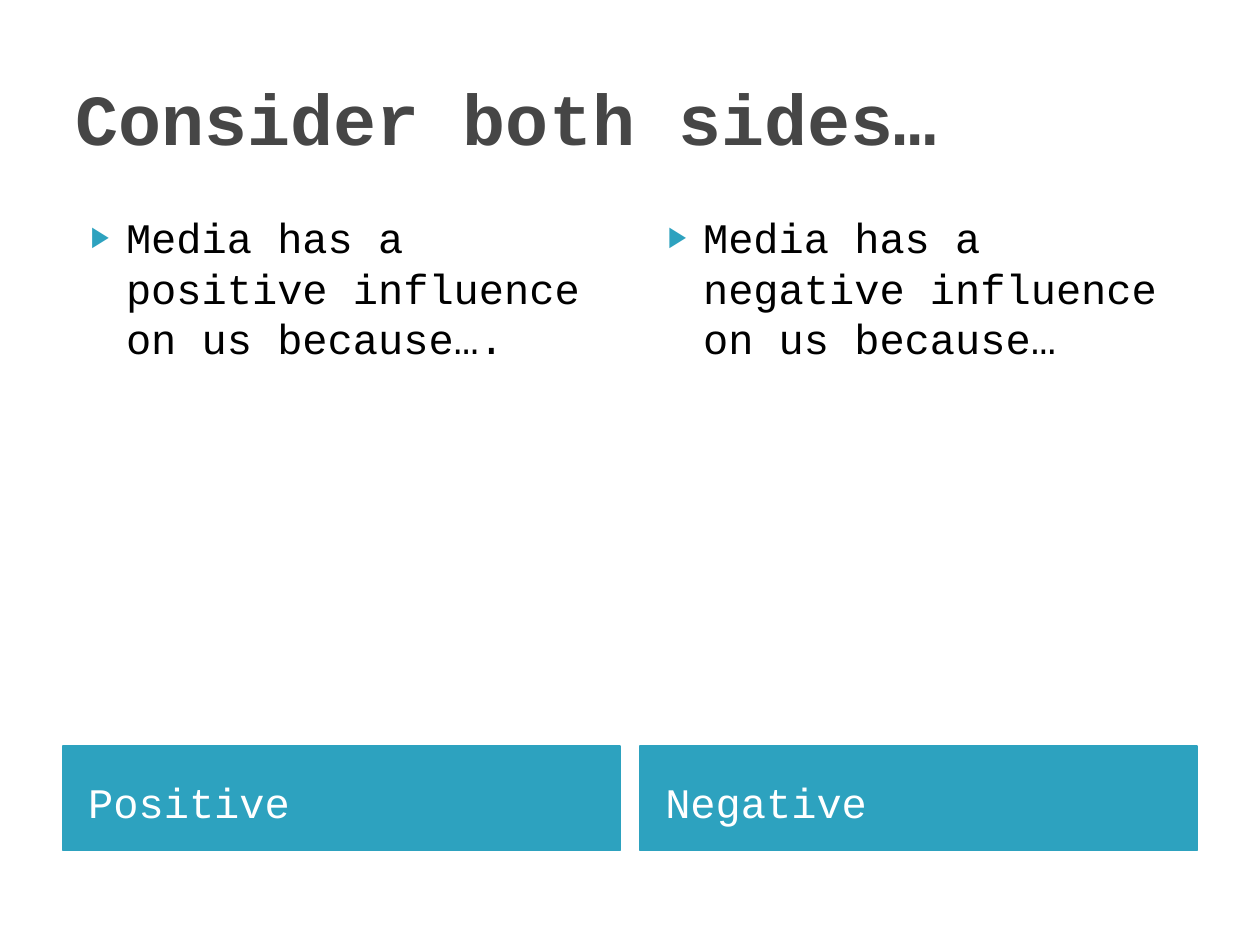
from lxml import etree
from pptx import Presentation
from pptx import util as u
from pptx.dml.color import RGBColor
from pptx.enum import text
from pptx.oxml.ns import qn

COLORS = {"heading": "464646", "accent": "2DA2BF", "label": "FFFFFF", "body": "000000"}
MARGIN, GUTTER = 0.5, 0.16
COLUMN_WIDTH = (10 - 2 * MARGIN - GUTTER) / 2
SIDES = [
    ("Positive", "Media has a positive influence on us because…."),
    ("Negative", "Media has a negative influence on us because…"),
]


def fill_placeholder(holder, box, words, size, color, anchor, bold=False):
    """Place a placeholder, write its one paragraph and return that paragraph."""
    holder.left, holder.top, holder.width, holder.height = map(u.Inches, box)
    frame = holder.text_frame
    frame.text = words
    frame.word_wrap = True
    frame.auto_size = text.MSO_AUTO_SIZE.NONE
    frame.vertical_anchor = anchor
    paragraph = frame.paragraphs[0]
    paragraph.alignment = text.PP_ALIGN.LEFT
    paragraph.space_before = u.Pt(0)
    for run in paragraph.runs:
        run.font.name = "Courier New"
        run.font.size = u.Pt(size)
        run.font.bold = bold
        run.font.color.rgb = RGBColor.from_string(COLORS[color])
    return paragraph


def add_triangle_bullet(paragraph):
    properties = paragraph._p.get_or_add_pPr()
    properties.set("marL", str(u.Inches(0.4)))
    properties.set("indent", str(u.Inches(-0.28)))
    bullet_color = etree.SubElement(properties, qn("a:buClr"))
    etree.SubElement(bullet_color, qn("a:srgbClr"), val=COLORS["accent"])
    etree.SubElement(properties, qn("a:buSzPct"), val="68000")
    etree.SubElement(properties, qn("a:buChar"), char="▶")


deck = Presentation()
deck.slide_width, deck.slide_height = u.Inches(10), u.Inches(7.5)
comparison = deck.slides.add_slide(deck.slide_layouts[4])
middle, top = text.MSO_ANCHOR.MIDDLE, text.MSO_ANCHOR.TOP

fill_placeholder(comparison.shapes.title, (MARGIN, 0.3, 10 - 2 * MARGIN, 1.25),
                 "Consider both sides…", 41, "heading", middle, bold=True)

for column, (side, argument) in enumerate(SIDES):
    left = MARGIN + column * (COLUMN_WIDTH + GUTTER)
    label = comparison.placeholders[1 + 2 * column]
    reasons = comparison.placeholders[2 + 2 * column]

    fill_placeholder(label, (left, 5.92, COLUMN_WIDTH, 0.83), side, 24, "label", middle)
    label.text_frame.margin_left = u.Inches(0.2)
    label.fill.solid()
    label.fill.fore_color.rgb = RGBColor.from_string(COLORS["accent"])
    label.line.color.rgb = RGBColor.from_string(COLORS["accent"])
    label.line.width = u.Pt(0.75)

    reason = fill_placeholder(reasons, (left, 1.58, COLUMN_WIDTH, 4.31),
                              argument, 24, "body", top)
    add_triangle_bullet(reason)

    for holder in (label, reasons):
        holder.text_frame.margin_top = u.Inches(0.1)

deck.save("out.pptx")
